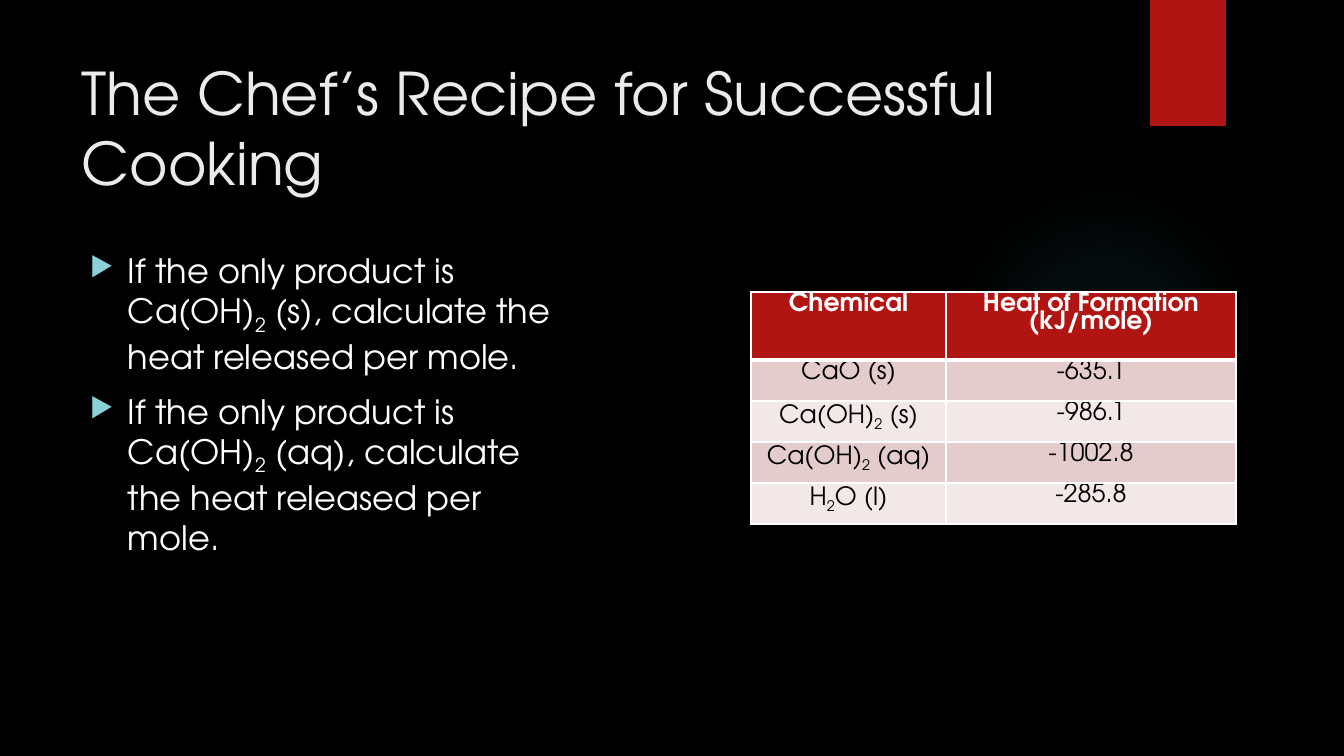
from pptx import Presentation
from pptx.dml.color import RGBColor
from pptx.enum.shapes import MSO_SHAPE
from pptx.enum.text import MSO_ANCHOR, PP_ALIGN
from pptx.oxml import parse_xml
from pptx.oxml.ns import nsdecls
from pptx.util import Pt

OVAL, RECTANGLE = MSO_SHAPE.OVAL, MSO_SHAPE.RECTANGLE
TOP, MIDDLE = MSO_ANCHOR.TOP, MSO_ANCHOR.MIDDLE
CENTER = PP_ALIGN.CENTER

FONT = "TeX Gyre Adventor"
RED, WHITE, BLACK = "B01513", "FFFFFF", "000000"
BANDS = ["E4CCCC", "F2E8E7"]
GLOW_STOPS = [(0, 7), (36, 6), (69, 0)]
TITLE = "The Chef’s Recipe for Successful Cooking"
QUESTIONS = [
    f"If the only product is Ca(OH)_2_ ({state}), calculate the heat released per mole."
    for state in ("s", "aq")
]
HEATS = [
    ("Chemical", "Heat of Formation (kJ/mole)"),
    ("CaO (s)", "-635.1"),
    ("Ca(OH)_2_ (s)", "-986.1"),
    ("Ca(OH)_2_ (aq)", "-1002.8"),
    ("H_2_O (l)", "-285.8"),
]
COLUMN_WIDTHS = [195, 290]
ROW_HEIGHTS = [68, 41, 41, 41, 41]


def px(length):
    """Turn pixels into EMU."""
    return round(length * 914400 / 100.8)


def rgb(color):
    """Turn a hex string into a colour."""
    return RGBColor.from_string(color)


def element(markup):
    """Build a DrawingML element from markup with one root tag."""
    head, rest = markup.split(">", 1)
    return parse_xml(f"{head} {nsdecls('a')}>{rest}")


def write(para, text, size, color, bold=False):
    """Fill a paragraph, lowering the parts between underscores."""
    for index, part in enumerate(text.split("_")):
        span = para.add_run()
        span.text = part
        font = span.font
        font.name, font.size, font.bold = FONT, Pt(size), bold
        font.color.rgb = rgb(color)
        if index % 2:
            font._element.set("baseline", "-25000")


def add_shape(page, kind, left, top, width, height, color):
    """Add a plain filled shape without outline or shadow."""
    shape = page.shapes.add_shape(kind, px(left), px(top), px(width), px(height))
    shape.shadow.inherit = False
    shape.fill.solid()
    shape.fill.fore_color.rgb = rgb(color)
    shape.line.fill.background()
    return shape


def add_glow(page):
    """Add the faint round glow behind the table."""
    glow = add_shape(page, OVAL, 949, 184, 310, 310, "50B9C1")
    stops = "".join(
        f'<a:gs pos="{place * 1000}"><a:srgbClr val="50B9C1">'
        f'<a:alpha val="{alpha * 1000}"/></a:srgbClr></a:gs>'
        for place, alpha in GLOW_STOPS
    )
    gradient = element(
        f'<a:gradFill><a:gsLst>{stops}</a:gsLst><a:path path="circle">'
        '<a:fillToRect l="50000" t="50000" r="50000" b="50000"/></a:path></a:gradFill>'
    )
    properties = glow.element.spPr
    properties.replace(properties.find("{*}solidFill"), gradient)


def add_ribbon(page):
    """Add the red ribbon with its soft shadow at the top edge."""
    ribbon = add_shape(page, RECTANGLE, 1150, 0, 76, 126, RED)
    ribbon.element.spPr.find("{*}effectLst").append(element(
        f'<a:outerShdw blurRad="{Pt(3)}" dist="{Pt(2)}" dir="5400000">'
        f'<a:srgbClr val="{BLACK}"><a:alpha val="45000"/></a:srgbClr></a:outerShdw>'
    ))


def add_box(page, left, top, width, height, anchor):
    """Add a wrapping text box and return its text frame."""
    box = page.shapes.add_textbox(px(left), px(top), px(width), px(height))
    frame = box.text_frame
    frame.word_wrap = True
    frame.vertical_anchor = anchor
    return frame


def add_bullets(page, texts):
    """Add the bulleted questions."""
    frame = add_box(page, 80, 245, 485, 444, TOP)
    for index, text in enumerate(texts):
        para = frame.add_paragraph() if index else frame.paragraphs[0]
        properties = para._p.get_or_add_pPr()
        properties.set("marL", str(px(38)))
        properties.set("indent", str(px(-38)))
        for markup in (
            '<a:buClr><a:srgbClr val="8AD0D6"/></a:buClr>',
            '<a:buSzPct val="80000"></a:buSzPct>',
            '<a:buChar char="▶"></a:buChar>',
        ):
            properties.append(element(markup))
        if index:
            para.space_before = Pt(10)
        write(para, text, 24, WHITE)


def set_borders(cell, row):
    """Draw white cell borders, thick below the header row."""
    widths = {"L": 1, "R": 1, "T": 3 if row == 1 else 1, "B": 1 if row else 3}
    properties = cell._tc.get_or_add_tcPr()
    for index, (side, width) in enumerate(widths.items()):
        properties.insert(index, element(
            f'<a:ln{side} w="{Pt(width)}"><a:solidFill><a:srgbClr val="{WHITE}"/>'
            f'</a:solidFill></a:ln{side}>'
        ))


def add_heat_table(page):
    """Add the table of heats of formation."""
    table = page.shapes.add_table(
        len(HEATS), len(COLUMN_WIDTHS), px(751), px(292),
        px(sum(COLUMN_WIDTHS)), px(sum(ROW_HEIGHTS)),
    ).table
    for column, width in zip(table.columns, COLUMN_WIDTHS):
        column.width = px(width)
    for index, (row, height) in enumerate(zip(table.rows, ROW_HEIGHTS)):
        row.height = px(height)
        for cell, text in zip(row.cells, HEATS[index]):
            cell.margin_left = cell.margin_right = px(11)
            cell.fill.solid()
            cell.fill.fore_color.rgb = rgb(BANDS[(index - 1) % 2] if index else RED)
            set_borders(cell, index)
            para = cell.text_frame.paragraphs[0]
            para.alignment = CENTER
            para.line_spacing = 0.77
            write(para, text, 18, BLACK if index else WHITE, bold=index == 0)


def main():
    """Build and save the slide."""
    deck = Presentation()
    deck.slide_width, deck.slide_height = px(1344), px(756)
    page = deck.slides.add_slide(deck.slide_layouts[6])
    page.background.fill.solid()
    page.background.fill.fore_color.rgb = rgb(BLACK)
    add_glow(page)
    add_ribbon(page)
    title = add_box(page, 72, 50, 1037, 154, MIDDLE)
    write(title.paragraphs[0], TITLE, 42, "EBEBEB")
    add_heat_table(page)
    add_bullets(page, QUESTIONS)
    deck.save("out.pptx")


if __name__ == "__main__":
    main()
